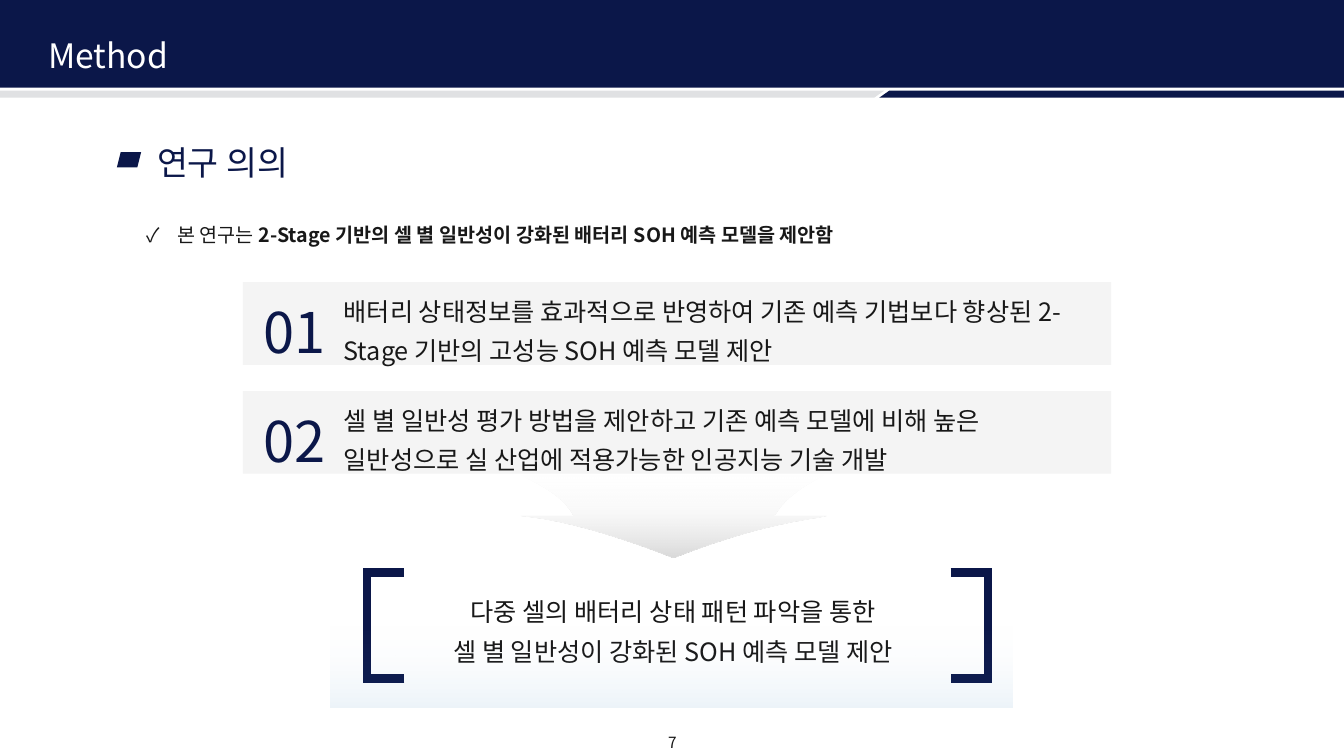
from lxml.etree import SubElement
from pptx import Presentation
from pptx.dml.color import RGBColor
from pptx.enum.shapes import MSO_SHAPE as Preset
from pptx.enum.text import MSO_ANCHOR as Anchor, MSO_AUTO_SIZE as AutoSize, PP_ALIGN as Align
from pptx.oxml import parse_xml
from pptx.oxml.ns import nsdecls, qn
from pptx.util import Inches, Pt

FONT = "Noto Sans CJK KR"
NAVY, INK, WHITE, PANEL, STRIPE = "0B1749", "181818", "FFFFFF", "F4F4F4", "E0E1E3"
BODY = {"line_spacing": 1.3}
CENTERED = {"alignment": Align.CENTER}


def color(code):
    """Turn a hex string into a colour."""
    return RGBColor.from_string(code)


def apply(target, formats):
    """Set every attribute named in a dict of format values."""
    for name, value in formats.items():
        setattr(target, name, value)


def paint(shape, fill):
    """Give a shape a plain fill, with no line and no shadow."""
    shape.shadow.inherit = False
    shape.fill.solid()
    shape.fill.fore_color.rgb = color(fill)
    shape.line.fill.background()


def paint_gradient(shape, stops):
    """Fill a shape downwards with (position, colour, opacity) stops in percent."""
    paint(shape, WHITE)
    marks = "".join(
        f'<a:gs pos="{position * 1000}"><a:srgbClr val="{code}">'
        f'<a:alpha val="{opacity * 1000}"/></a:srgbClr></a:gs>'
        for position, code, opacity in stops)
    gradient = parse_xml(
        f'<a:gradFill {nsdecls("a")} rotWithShape="1"><a:gsLst>{marks}</a:gsLst>'
        '<a:lin ang="5400000" scaled="0"/></a:gradFill>')
    properties = shape.element.spPr
    properties.replace(properties.find(qn("a:solidFill")), gradient)


def add_block(slide, box, preset, fill):
    """Place a plain preset shape in a box."""
    block = slide.shapes.add_shape(preset, *map(Inches, box))
    paint(block, fill)
    return block


def add_outline(slide, points):
    """Draw a closed outline through points given in inches."""
    corners = [(Inches(x), Inches(y)) for x, y in points]
    builder = slide.shapes.build_freeform(*corners[0])
    builder.add_line_segments(corners[1:], close=True)
    return builder.convert_to_shape()


def add_text(slide, box, lines, size, ink=INK, layout=BODY, anchor=Anchor.TOP):
    """Place lines, each a list of (text, bold) runs, in a box."""
    frame = slide.shapes.add_textbox(*map(Inches, box)).text_frame
    apply(frame, {"word_wrap": True, "vertical_anchor": anchor,
                  "auto_size": AutoSize.SHAPE_TO_FIT_TEXT})
    for index, line in enumerate(lines):
        paragraph = frame.add_paragraph() if index else frame.paragraphs[0]
        apply(paragraph, layout)
        for words, bold in line:
            run = paragraph.add_run()
            run.text = words
            apply(run.font, {"size": Pt(size), "name": FONT, "bold": bold})
            run.font.color.rgb = color(ink)
            SubElement(run.font._element, qn("a:ea"), typeface=FONT)
    return frame


def plain(*lines):
    """Make each line a single regular run."""
    return [[(line, False)] for line in lines]


def curve(start, first, second, end, steps=16):
    """List the points of a Bezier curve after its start."""
    return [tuple((1 - t) ** 3 * a + 3 * (1 - t) ** 2 * t * b
                  + 3 * (1 - t) * t ** 2 * c + t ** 3 * d
                  for a, b, c, d in zip(start, first, second, end))
            for t in (step / steps for step in range(1, steps + 1))]


def add_header(slide, width, height, title):
    """Draw the title band and the two stripes under it."""
    add_block(slide, (0, 0, width, height), Preset.RECTANGLE, NAVY)
    top, bottom = height + 0.03, height + 0.1
    stripes = [
        ([(0, top), (8.77, top), (8.67, bottom), (0, bottom)], STRIPE),
        ([(8.82, top), (width, top), (width, bottom), (8.72, bottom)], NAVY)]
    for points, fill in stripes:
        paint(add_outline(slide, points), fill)
    add_text(slide, (0.38, 0.34, 5.67, 0.46), plain(title), 24, WHITE,
             {"line_spacing": 0.9, "space_before": Pt(10)}, Anchor.MIDDLE)


def add_heading(slide, left, top, heading):
    """Place the section heading after its slanted marker."""
    add_text(slide, (left + 0.3, top, 5.86, 0.57), plain(heading), 24, NAVY,
             anchor=Anchor.MIDDLE)
    add_block(slide, (left, top + 0.25, 0.24, 0.15), Preset.PARALLELOGRAM, NAVY)


def add_claim(slide, box, runs):
    """Place the ticked statement with a hanging indent."""
    claim = add_text(slide, box, [runs], 14).paragraphs[0]
    properties = claim._p.get_or_add_pPr()
    properties.set("marL", str(Inches(0.31)))
    properties.set("indent", str(Inches(-0.31)))
    SubElement(properties, qn("a:buFont"), typeface=FONT)
    SubElement(properties, qn("a:buChar"), char="✓")


def add_point(slide, left, top, number, lines):
    """Draw one numbered contribution on its grey panel."""
    add_block(slide, (left, top, 8.61, 0.82), Preset.RECTANGLE, PANEL)
    add_text(slide, (left + 0.9, top, 7.71, 0.85), plain(*lines), 18)
    add_text(slide, (left - 0.08, top + 0.1, 1.18, 0.77), plain(f"{number:02}"),
             40, NAVY, CENTERED)


def add_arrow(slide, left, top):
    """Draw the fading arrow that leads to the conclusion."""
    edges = [
        [(0.55, 0.41), (0.45, 0.22), (0.23, 0.11), (0, 0)],
        [(3.06, 0), (2.8, 0.13), (2.64, 0.24), (2.54, 0.41)],
        [(3.06, 0.41), (2.8, 0.46), (2.4, 0.49), (1.54, 0.82)],
        [(1.54, 0.82), (0.71, 0.5), (0.26, 0.43), (0.02, 0.41)]]
    points = [point for edge in edges for point in [edge[0], *curve(*edge)]]
    arrow = add_outline(slide, [(left + x, top + y) for x, y in points])
    paint_gradient(arrow, [(1, "F2F2F2", 0), (44, "E7E7E7", 24), (100, "D9D9D9", 100)])


def add_conclusion(slide, left, top, lines):
    """Place the bracketed conclusion over its fading glow."""
    add_text(slide, (left + 0.74, top + 0.1, 5.31, 0.85), plain(*lines), 18,
             layout=BODY | CENTERED)
    for preset, offset in ((Preset.LEFT_BRACKET, 0.36), (Preset.RIGHT_BRACKET, 6.15)):
        bracket = add_block(slide, (left + offset, top, 0.37, 1.05), preset, WHITE)
        bracket.fill.background()
        bracket.adjustments[0] = 0
        bracket.line.color.rgb = color(NAVY)
        bracket.line.width = Pt(6)
        SubElement(bracket.element.spPr.find(qn("a:ln")), qn("a:miter"), lim="800000")
    glow = add_block(slide, (left, top + 0.48, 6.76, 0.86), Preset.RECTANGLE, WHITE)
    paint_gradient(glow, [(0, "F6F8FC", 0), (100, "0360AE", 8)])


def build_method_slide(deck):
    """Build the slide on the significance of the study."""
    slide = deck.slides.add_slide(deck.slide_layouts[6])
    add_header(slide, 13.33, 0.87, "Method")
    add_text(slide, (6.33, 7.22, 0.68, 0.29), plain("7"), 11, layout=CENTERED)
    add_conclusion(slide, 3.28, 5.68, ["다중 셀의 배터리 상태 패턴 파악을 통한",
                                       "셀 별 일반성이 강화된 SOH 예측 모델 제안"])
    points = [
        ["배터리 상태정보를 효과적으로 반영하여 기존 예측 기법보다 향상된 "
         "2-Stage 기반의 고성능 SOH 예측 모델 제안"],
        ["셀 별 일반성 평가 방법을 제안하고 기존 예측 모델에 비해 높은",
         "일반성으로 실 산업에 적용가능한 인공지능 기술 개발"]]
    for index, lines in enumerate(points):
        add_point(slide, 2.41, 2.8 + 1.08 * index, index + 1, lines)
    add_arrow(slide, 5.14, 4.71)
    add_claim(slide, (1.35, 2.09, 10.49, 0.37), [
        ("본 연구는 ", False),
        ("2-Stage 기반의 셀 별 일반성이 강화된 배터리 SOH 예측 모델을 제안함", True)])
    add_heading(slide, 1.16, 1.26, "연구 의의")


def main():
    """Build and save the deck."""
    deck = Presentation()
    apply(deck, {"slide_width": Inches(13.33), "slide_height": Inches(7.5)})
    build_method_slide(deck)
    deck.save("out.pptx")


if __name__ == "__main__":
    main()
